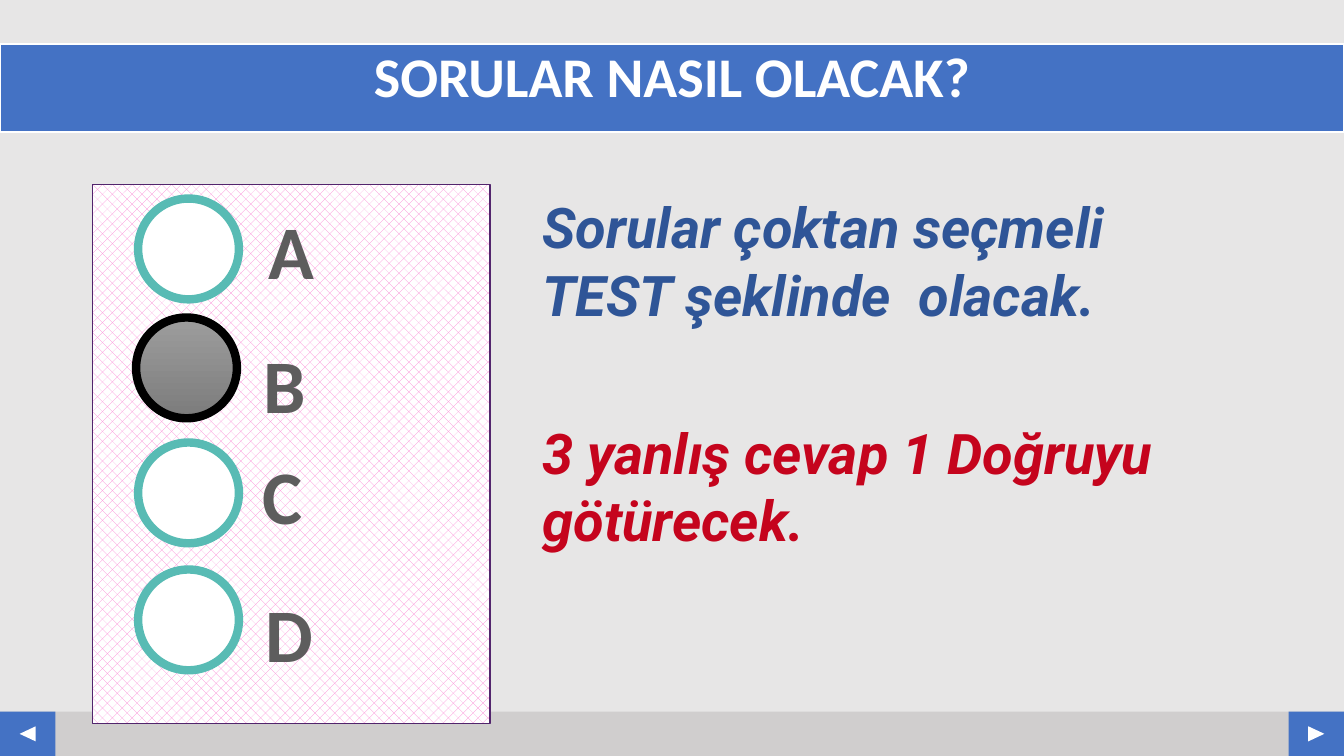
from pptx import Presentation
from pptx.dml.color import RGBColor
from pptx.enum.dml import MSO_PATTERN
from pptx.enum.shapes import MSO_SHAPE as Shape
from pptx.enum.text import MSO_ANCHOR as Anchor, MSO_AUTO_SIZE as AutoSize, PP_ALIGN as Align
from pptx.util import Inches, Pt

TITLE = "SORULAR NASIL OLACAK?"
BLUE = RGBColor(0x44, 0x72, 0xC4)
NAVY = RGBColor(0x2F, 0x55, 0x97)
RED = RGBColor(0xC5, 0x04, 0x1D)
TEAL = RGBColor(0x58, 0xBB, 0xB4)
PINK = RGBColor(0xFB, 0x85, 0xD4)
PURPLE = RGBColor(0x52, 0x25, 0x6D)
LETTER_GREY = RGBColor(0x5D, 0x5D, 0x5D)
PAGE_GREY = RGBColor(0xE7, 0xE6, 0xE6)
FOOTER_GREY = RGBColor(0xD0, 0xCE, 0xCE)
MARK_TOP = RGBColor(0x9D, 0x9D, 0x9D)
MARK_BOTTOM = RGBColor(0x7C, 0x7C, 0x7C)
WHITE = RGBColor(0xFF, 0xFF, 0xFF)
BLACK = RGBColor(0, 0, 0)

WIDTH, HEIGHT = 13.33, 7.5
FOOTER_HEIGHT, BUTTON_WIDTH = 0.44, 0.55
ARROW_WIDTH, ARROW_HEIGHT = 0.15, 0.16
BUBBLE_SIZE, LETTER_HEIGHT = 1, 1.01
CHOSEN = "B"
CHOICES = [
    ("A", 1.37, 1.97, 2.49, 1.97, 0.79),
    ("B", 1.35, 3.15, 2.51, 3.3, 0.63),
    ("C", 1.37, 4.39, 2.49, 4.4, 0.63),
    ("D", 1.37, 5.65, 2.53, 5.77, 0.68),
]
STATEMENTS = [
    ("Sorular çoktan seçmeli TEST şeklinde  olacak.", 1.84, NAVY),
    ("3 yanlış cevap 1 Doğruyu götürecek.", 4.08, RED),
]


def place(slide, kind, left, top, width, height, fill=None, line=None, line_width=1):
    shape = slide.shapes.add_shape(kind, *map(Inches, (left, top, width, height)))
    shape.shadow.inherit = False
    if fill is not None:
        shape.fill.solid()
        shape.fill.fore_color.rgb = fill
    if line is None:
        shape.line.fill.background()
    else:
        shape.line.color.rgb = line
        shape.line.width = Pt(line_width)
    return shape


def write(paragraph, text, size, font_name, color, italic=False):
    run = paragraph.add_run()
    run.text = text
    font = run.font
    font.size, font.name, font.bold, font.italic = Pt(size), font_name, True, italic
    font.color.rgb = color


def add_text_box(slide, left, top, width, height, wrap):
    box = slide.shapes.add_textbox(*map(Inches, (left, top, width, height)))
    frame = box.text_frame
    frame.word_wrap = wrap
    frame.auto_size = AutoSize.SHAPE_TO_FIT_TEXT
    return frame


def add_footer(slide):
    top = HEIGHT - FOOTER_HEIGHT
    place(slide, Shape.RECTANGLE, 0, top, WIDTH, FOOTER_HEIGHT, FOOTER_GREY)
    for left, rotation in ((0, 270), (WIDTH - BUTTON_WIDTH, 90)):
        place(slide, Shape.RECTANGLE, left, top, BUTTON_WIDTH, FOOTER_HEIGHT, BLUE)
        arrow = place(slide, Shape.ISOSCELES_TRIANGLE, left + (BUTTON_WIDTH - ARROW_WIDTH) / 2,
                      top + (FOOTER_HEIGHT - ARROW_HEIGHT) / 2, ARROW_WIDTH, ARROW_HEIGHT, WHITE)
        arrow.rotation = rotation


def add_title(slide):
    title = slide.shapes.title
    title.left, title.top, title.width, title.height = map(Inches, (0, 0.44, WIDTH, 0.87))
    title.fill.solid()
    title.fill.fore_color.rgb = BLUE
    title.line.color.rgb = WHITE
    title.line.width = Pt(1.5)
    frame = title.text_frame
    frame.auto_size = AutoSize.NONE
    frame.vertical_anchor = Anchor.TOP
    paragraph = frame.paragraphs[0]
    paragraph.alignment = Align.CENTER
    paragraph.line_spacing = 0.9
    write(paragraph, TITLE, 40, "Calibri", WHITE)


def add_answer_panel(slide):
    panel = place(slide, Shape.RECTANGLE, 0.92, 1.83, 3.94, 5.35, line=PURPLE)
    panel.fill.patterned()
    panel.fill.pattern = MSO_PATTERN.PERCENT_30
    panel.fill.fore_color.rgb = PINK
    panel.fill.back_color.rgb = WHITE
    for letter, left, top, letter_left, letter_top, letter_width in CHOICES:
        chosen = letter == CHOSEN
        bubble = place(slide, Shape.OVAL, left, top, BUBBLE_SIZE, BUBBLE_SIZE,
                       WHITE, BLACK if chosen else TEAL, 6)
        if chosen:
            bubble.fill.gradient()
            bubble.fill.gradient_angle = 270
            for stop, color in zip(bubble.fill.gradient_stops, (MARK_TOP, MARK_BOTTOM)):
                stop.color.rgb = color
        frame = add_text_box(slide, letter_left, letter_top, letter_width, LETTER_HEIGHT, False)
        paragraph = frame.paragraphs[0]
        paragraph.alignment = Align.CENTER
        write(paragraph, letter, 54, "Calibri", LETTER_GREY)


def add_statements(slide):
    for text, top, color in STATEMENTS:
        frame = add_text_box(slide, 5.25, top, 7.09, 1.48, True)
        frame.vertical_anchor = Anchor.MIDDLE
        frame.margin_left = frame.margin_right = Inches(0.13)
        frame.margin_top = frame.margin_bottom = Inches(0.07)
        write(frame.paragraphs[0], text, 40, "Roboto", color, True)


def main():
    presentation = Presentation()
    presentation.slide_width = Inches(WIDTH)
    presentation.slide_height = Inches(HEIGHT)
    slide = presentation.slides.add_slide(presentation.slide_layouts[5])
    slide.background.fill.solid()
    slide.background.fill.fore_color.rgb = PAGE_GREY
    add_footer(slide)
    add_title(slide)
    add_answer_panel(slide)
    add_statements(slide)
    presentation.save("out.pptx")


if __name__ == "__main__":
    main()
